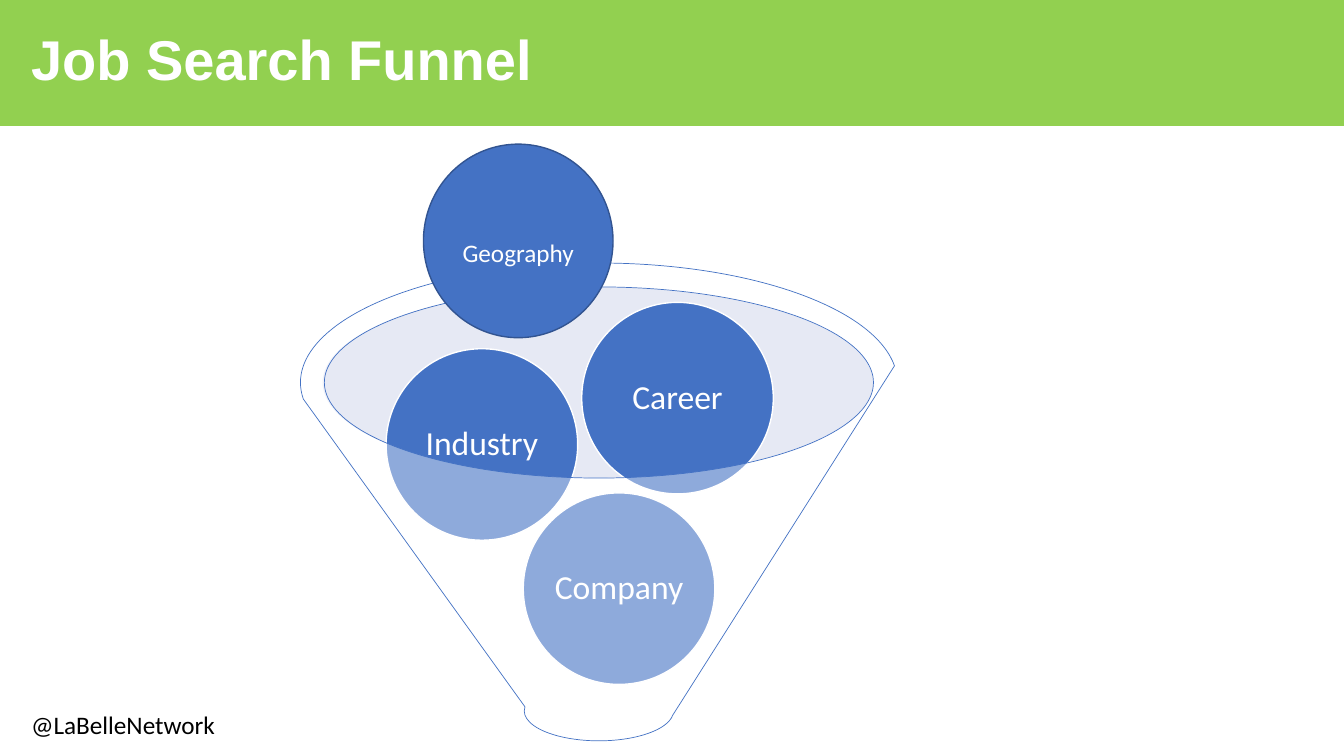
from dataclasses import dataclass

from lxml import etree
from pptx import Presentation
from pptx import util as u
from pptx.dml.color import RGBColor
from pptx.enum import shapes, text
from pptx.oxml.ns import qn

TITLE = "Job Search Funnel"
HANDLE = "@LaBelleNetwork"
TOP_BALL = "Geography"
# Label, left and top of each ball inside the funnel, in inches
BALLS = [("Company", 5.19, 4.89), ("Industry", 3.83, 3.46), ("Career", 5.77, 3.0)]

WIDTH, HEIGHT = 13.33, 7.5
MARGIN = 0.21
BANNER_HEIGHT = HEIGHT / 6
BALL_SIZE = 1.9
RIM = (3.2, 2.85, 5.46, 1.89)
FUNNEL = (2.98, 2.61, 5.92, 4.74)
TOP_BALL_AREA = (4.2, 1.43, 1.88, 1.92)
LABEL_HEIGHT = 0.4


@dataclass(frozen=True)
class Theme:
    banner: str = "92D050"
    ball: str = "4472C4"
    ball_edge: str = "325491"
    rim: str = "C1C9E4"
    white: str = "FFFFFF"
    black: str = "000000"
    glass: int = 40
    title_font: str = "Arial"
    body_font: str = "Calibri"
    title_size: int = 40
    ball_size: int = 24
    label_size: int = 18


THEME = Theme()


def inches(area):
    return [u.Inches(length) for length in area]


def add_form(page, kind, area, fill, line=None, line_width=1, opacity=None):
    """Add a preset shape; opacity is a percentage."""
    form = page.shapes.add_shape(kind, *inches(area))
    form.shadow.inherit = False
    form.fill.solid()
    form.fill.fore_color.rgb = RGBColor.from_string(fill)
    if opacity is not None:
        color = form.fill._xPr.find(qn("a:solidFill"))[0]
        etree.SubElement(color, qn("a:alpha")).set("val", str(opacity * 1000))
    if line:
        form.line.color.rgb = RGBColor.from_string(line)
        form.line.width = u.Pt(line_width)
    else:
        form.line.fill.background()
    return form


def write(box, words, size, color, font=THEME.body_font, bold=False,
          align=text.PP_ALIGN.LEFT, anchor=text.MSO_ANCHOR.TOP,
          spacing=None, inset=None):
    frame = box.text_frame
    frame.word_wrap = True
    frame.vertical_anchor = anchor
    if inset is not None:
        frame.margin_left = frame.margin_right = u.Inches(inset)
        frame.margin_top = frame.margin_bottom = u.Inches(inset)
    para = frame.paragraphs[0]
    para.alignment = align
    para.line_spacing = spacing
    span = para.add_run()
    span.text = words
    span.font.name = font
    span.font.size = u.Pt(size)
    span.font.bold = bold
    span.font.color.rgb = RGBColor.from_string(color)


def add_text(page, area, words, size, color, **style):
    write(page.shapes.add_textbox(*inches(area)), words, size, color, **style)


def add_banner(page):
    add_form(page, shapes.MSO_SHAPE.RECTANGLE, (0, 0, WIDTH, BANNER_HEIGHT), THEME.banner)
    add_text(page, (MARGIN, 0.07, WIDTH - 2 * MARGIN, 1.1), TITLE,
             THEME.title_size, THEME.white, font=THEME.title_font, bold=True,
             anchor=text.MSO_ANCHOR.MIDDLE, spacing=0.9)


def add_funnel(page):
    oval = shapes.MSO_SHAPE.OVAL
    add_form(page, oval, RIM, THEME.rim, opacity=THEME.glass)
    for label, left, top in BALLS:
        ball = add_form(page, oval, (left, top, BALL_SIZE, BALL_SIZE), THEME.ball, THEME.white)
        write(ball, label, THEME.ball_size, THEME.white, align=text.PP_ALIGN.CENTER,
              anchor=text.MSO_ANCHOR.MIDDLE, spacing=0.9, inset=0.03)
    add_form(page, shapes.MSO_SHAPE.FUNNEL, FUNNEL, THEME.white, THEME.ball, 0.5, THEME.glass)


def add_top_ball(page):
    left, _, width, _ = TOP_BALL_AREA
    add_form(page, shapes.MSO_SHAPE.OVAL, TOP_BALL_AREA, THEME.ball, THEME.ball_edge)
    add_text(page, (left, 2.31, width, LABEL_HEIGHT), TOP_BALL, THEME.label_size,
             THEME.white, align=text.PP_ALIGN.CENTER)


def main():
    deck = Presentation()
    deck.slide_width, deck.slide_height = inches((WIDTH, HEIGHT))
    page = deck.slides.add_slide(deck.slide_layouts[6])
    add_banner(page)
    add_funnel(page)
    add_top_ball(page)
    add_text(page, (MARGIN, 6.99, 2.1, LABEL_HEIGHT), HANDLE, THEME.label_size, THEME.black)
    deck.save("out.pptx")


if __name__ == "__main__":
    main()
